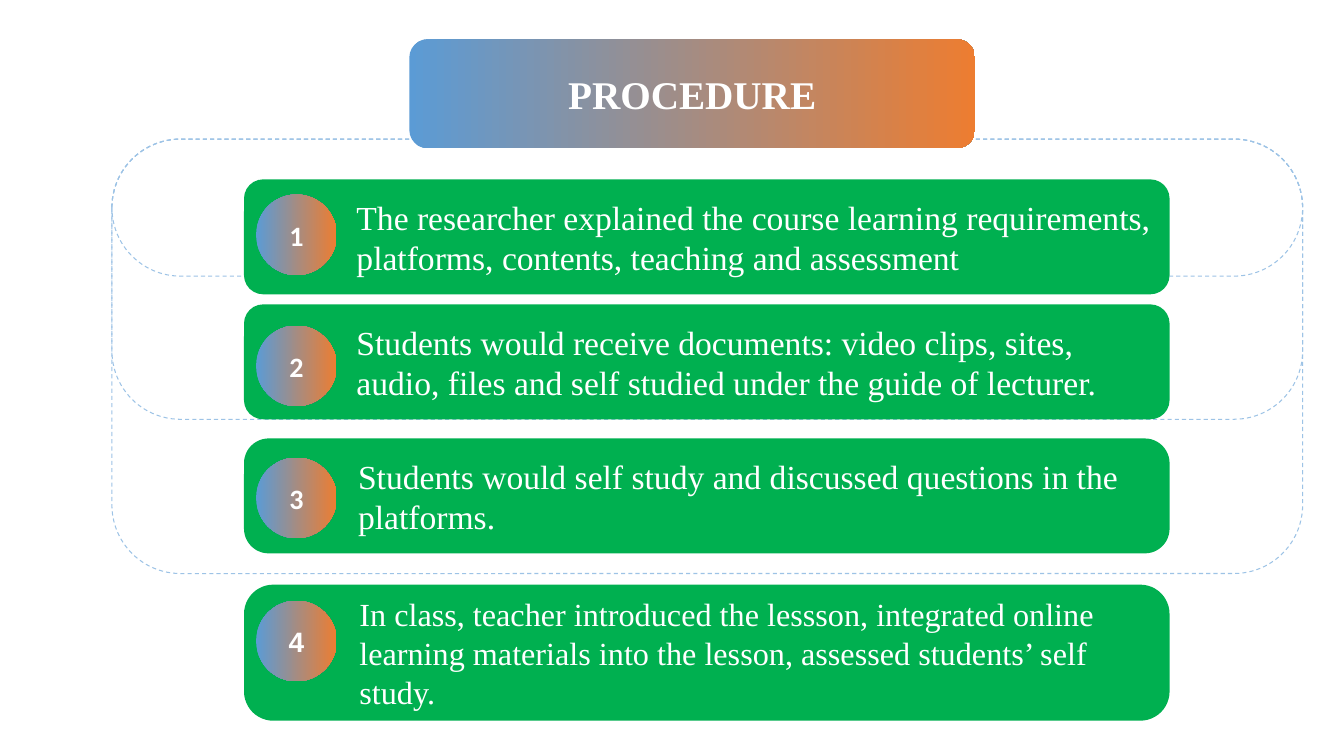
import pptx
import pptx.util
import pptx.dml.color
import pptx.enum.dml
import pptx.enum.shapes
import pptx.enum.text

Inches = pptx.util.Inches
Pt = pptx.util.Pt
RGBColor = pptx.dml.color.RGBColor
Shape = pptx.enum.shapes.MSO_SHAPE
Align = pptx.enum.text.PP_ALIGN

WHITE = RGBColor(0xFF, 0xFF, 0xFF)
GREEN = RGBColor(0x00, 0xB0, 0x50)
BLUE = RGBColor(0x5B, 0x9B, 0xD5)
ORANGE = RGBColor(0xED, 0x7D, 0x31)
PALE_BLUE = RGBColor(0x9D, 0xC3, 0xE6)
SERIF = "Times New Roman"

LOOP_HEIGHTS = [1.36, 2.78, 4.31]
LOOP_RADIUS = 0.68
DEFAULT_CORNER = 0.1667

# top, height, corner, text size, badge top, badge font, text
STEPS = [
    (1.78, 1.14, DEFAULT_CORNER, 24, 1.93, "Calibri",
     "The researcher explained the course learning requirements, "
     "platforms, contents, teaching and assessment"),
    (3.02, 1.14, DEFAULT_CORNER, 24, 3.23, "Calibri",
     "Students would receive documents: video clips, sites, audio, "
     "files and self studied under the guide of lecturer."),
    (4.35, 1.14, 0.215, 24, 4.54, "Calibri",
     "Students would self study and discussed questions in the platforms."),
    (5.8, 1.35, 0.215, 23, 5.96, "Arial",
     "In class, teacher introduced the lessson, integrated online learning "
     "materials into the lesson, assessed students’ self study."),
]


class ProcedureSlide:
    def __init__(self, presentation):
        self.slide = presentation.slides.add_slide(presentation.slide_layouts[6])

    def shape(self, kind, left, top, width, height, corner=None):
        """Add a preset shape without shadow or outline."""
        shape = self.slide.shapes.add_shape(
            kind, Inches(left), Inches(top), Inches(width), Inches(height))
        shape.shadow.inherit = False
        shape.line.fill.background()
        if corner is not None:
            shape.adjustments[0] = corner
        return shape

    def blend(self, shape):
        """Fill a shape from blue on the left to orange on the right."""
        shape.fill.gradient()
        shape.fill.gradient_angle = 0
        for stop, color, position in zip(
                shape.fill.gradient_stops, (BLUE, ORANGE), (0, 1)):
            stop.color.rgb = color
            stop.position = position

    def label(self, shape, text, size, font, bold=False, align=Align.CENTER, wrap=True):
        """Put white, vertically centred text into a shape."""
        frame = shape.text_frame
        frame.word_wrap = wrap
        frame.vertical_anchor = pptx.enum.text.MSO_ANCHOR.MIDDLE
        paragraph = frame.paragraphs[0]
        paragraph.alignment = align
        run = paragraph.add_run()
        run.text = text
        run.font.size = Pt(size)
        run.font.name = font
        run.font.bold = bold
        run.font.color.rgb = WHITE

    def loop(self, height):
        """Add one dashed outline that hangs from the title."""
        loop = self.shape(Shape.ROUNDED_RECTANGLE, 1.11, 1.38, 11.81, height,
                          LOOP_RADIUS / height)
        loop.fill.background()
        loop.line.color.rgb = PALE_BLUE
        loop.line.width = Pt(0.75)
        loop.line.dash_style = pptx.enum.dml.MSO_LINE.DASH

    def title(self, text):
        title = self.shape(Shape.ROUNDED_RECTANGLE, 4.06, 0.39, 5.61, 1.08)
        self.blend(title)
        self.label(title, text, 28, SERIF, bold=True)

    def bar(self, top, height, corner, size, text):
        bar = self.shape(Shape.ROUNDED_RECTANGLE, 2.42, top, 9.18, height, corner)
        bar.fill.solid()
        bar.fill.fore_color.rgb = GREEN
        bar.text_frame.margin_left = Inches(1.06)
        self.label(bar, text, size, SERIF, align=Align.LEFT)

    def badge(self, number, top, font):
        badge = self.shape(Shape.OVAL, 2.54, top, 0.8, 0.8)
        self.blend(badge)
        self.label(badge, str(number), 20, font, bold=True, wrap=False)


def main():
    presentation = pptx.Presentation()
    presentation.slide_width = Inches(13.33)
    presentation.slide_height = Inches(7.5)
    procedure = ProcedureSlide(presentation)
    for height in LOOP_HEIGHTS:
        procedure.loop(height)
    procedure.title("PROCEDURE")
    for number, step in enumerate(STEPS, 1):
        top, height, corner, size, badge_top, badge_font, text = step
        procedure.bar(top, height, corner, size, text)
        procedure.badge(number, badge_top, badge_font)
    presentation.save("out.pptx")


if __name__ == "__main__":
    main()
